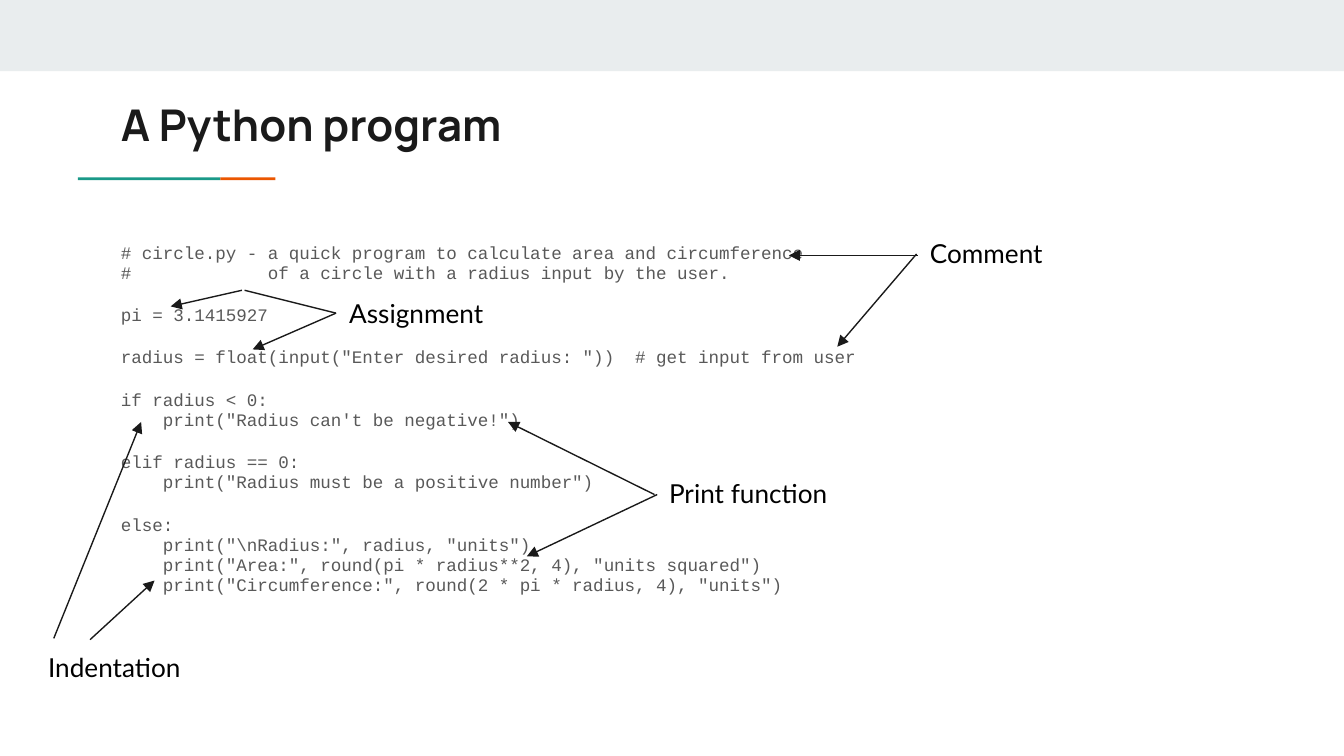
from copy import deepcopy
from typing import NamedTuple

from lxml.etree import SubElement
from pptx import Presentation
from pptx.dml.color import RGBColor
from pptx.enum.shapes import MSO_CONNECTOR, MSO_SHAPE
from pptx.enum.text import MSO_ANCHOR, MSO_AUTO_SIZE, PP_ALIGN
from pptx.oxml.ns import qn
from pptx.util import Inches, Pt

BAND = RGBColor(0xE9, 0xED, 0xEE)
TEAL = RGBColor(0x1A, 0x99, 0x88)
ORANGE = RGBColor(0xEB, 0x56, 0x00)
INK = RGBColor(0x1A, 0x1A, 0x1A)
GREY = RGBColor(0x59, 0x59, 0x59)
BLACK = RGBColor(0, 0, 0)

TITLE_FONT = {"name": "Manrope", "size": Pt(23.4), "bold": True}
CODE_FONT = {"name": "Courier New", "size": Pt(9.4)}
LABEL_FONT = {"name": "Lato", "size": Pt(14)}


class Box(NamedTuple):
    left: float
    top: float
    width: float
    height: float


class Arrow(NamedTuple):
    x1: float
    y1: float
    x2: float
    y2: float
    head: bool = True


class Callout(NamedTuple):
    text: str
    box: Box
    arrows: list[Arrow]


BARS = [
    (Box(0, 0, 10, 0.53), BAND),
    (Box(0.58, 1.32, 1.06, 0.02), TEAL),
    (Box(1.64, 1.32, 0.41, 0.02), ORANGE),
]

CODE = [
    "# circle.py - a quick program to calculate area and circumference\n"
    "#             of a circle with a radius input by the user.",
    "pi = 3.1415927",
    'radius = float(input("Enter desired radius: "))  # get input from user',
    "if radius < 0:\n"
    '    print("Radius can\'t be negative!")',
    "elif radius == 0:\n"
    '    print("Radius must be a positive number")',
    "else:\n"
    '    print("\\nRadius:", radius, "units")\n'
    '    print("Area:", round(pi * radius**2, 4), "units squared")\n'
    '    print("Circumference:", round(2 * pi * radius, 4), "units")',
]

CALLOUTS = [
    Callout("Comment", Box(6.82, 1.67, 1.35, 0.44), [
        Arrow(6.83, 1.9, 5.87, 1.9),
        Arrow(6.82, 1.89, 6.23, 2.58),
    ]),
    Callout("Assignment", Box(2.5, 2.11, 1.35, 0.44), [
        Arrow(2.5, 2.33, 1.88, 2.6),
        Arrow(2.5, 2.33, 1.82, 2.16, head=False),
        Arrow(1.8, 2.16, 1.27, 2.28),
    ]),
    Callout("Print function", Box(4.88, 3.45, 1.63, 0.44), [
        Arrow(4.87, 3.68, 3.78, 3.14),
        Arrow(4.89, 3.68, 3.92, 4.14),
    ]),
    Callout("Indentation", Box(0.26, 4.75, 1.63, 0.44), [
        Arrow(0.67, 4.76, 1.15, 4.32),
        Arrow(0.4, 4.75, 1.05, 3.14),
    ]),
]


def place(sp, box: Box) -> None:
    for name, value in box._asdict().items():
        setattr(sp, name, Inches(value))


def setup_frame(tf, anchor=MSO_ANCHOR.TOP) -> None:
    tf.word_wrap = True
    tf.auto_size = MSO_AUTO_SIZE.NONE
    tf.vertical_anchor = anchor
    for side in ("left", "right", "top", "bottom"):
        setattr(tf, f"margin_{side}", Inches(0.1))


def write(p, text: str, font: dict, color: RGBColor) -> None:
    """Fill a paragraph, giving its line breaks the same format as its runs."""
    p.text = text
    p.alignment = PP_ALIGN.LEFT
    for r in p.runs:
        for name, value in font.items():
            setattr(r.font, name, value)
        r.font.color.rgb = color
    for br in p._p.findall(qn("a:br")):
        br.append(deepcopy(p.runs[0]._r.rPr))


def add_bar(slide, box: Box, color: RGBColor) -> None:
    sp = slide.shapes.add_shape(MSO_SHAPE.RECTANGLE, *map(Inches, box))
    sp.shadow.inherit = False
    sp.fill.solid()
    sp.fill.fore_color.rgb = color
    sp.line.fill.background()


def add_arrow(slide, arrow: Arrow) -> None:
    ends = map(Inches, arrow[:4])
    line = slide.shapes.add_connector(MSO_CONNECTOR.STRAIGHT, *ends)
    line.line.color.rgb = INK
    line.line.width = Pt(0.75)
    if arrow.head:
        SubElement(line.line._get_or_add_ln(), qn("a:tailEnd"),
                   type="triangle", w="med", len="med")
    SubElement(line._element.spPr, qn("a:effectLst"))


def add_callout(slide, callout: Callout) -> None:
    tf = slide.shapes.add_textbox(*map(Inches, callout.box)).text_frame
    setup_frame(tf)
    tf.auto_size = MSO_AUTO_SIZE.SHAPE_TO_FIT_TEXT
    write(tf.paragraphs[0], callout.text, LABEL_FONT, BLACK)
    for arrow in callout.arrows:
        add_arrow(slide, arrow)


def fill_code(body) -> None:
    tf = body.text_frame
    setup_frame(tf)
    for i, block in enumerate(CODE):
        p = tf.add_paragraph() if i else tf.paragraphs[0]
        write(p, block, CODE_FONT, GREY)
        p.line_spacing = 0.95
        p.space_before = Pt(12 if i else 0)
        pPr = p._p.get_or_add_pPr()
        pPr.set("marL", "0")
        pPr.set("indent", "0")
        SubElement(pPr, qn("a:buNone"))
    p.space_after = Pt(12)


def main() -> None:
    prs = Presentation()
    prs.slide_width = Inches(10)
    prs.slide_height = prs.slide_width * 9 // 16
    slide = prs.slides.add_slide(prs.slide_layouts[1])
    title, body = slide.placeholders

    for box, color in BARS:
        add_bar(slide, box, color)

    place(title, Box(0.8, 0.63, 8.41, 0.59))
    setup_frame(title.text_frame, MSO_ANCHOR.MIDDLE)
    write(title.text_frame.paragraphs[0], "A Python program", TITLE_FONT, INK)

    place(body, Box(0.8, 1.71, 8.41, 3.04))
    fill_code(body)

    for callout in CALLOUTS:
        add_callout(slide, callout)

    prs.save("out.pptx")


if __name__ == "__main__":
    main()
